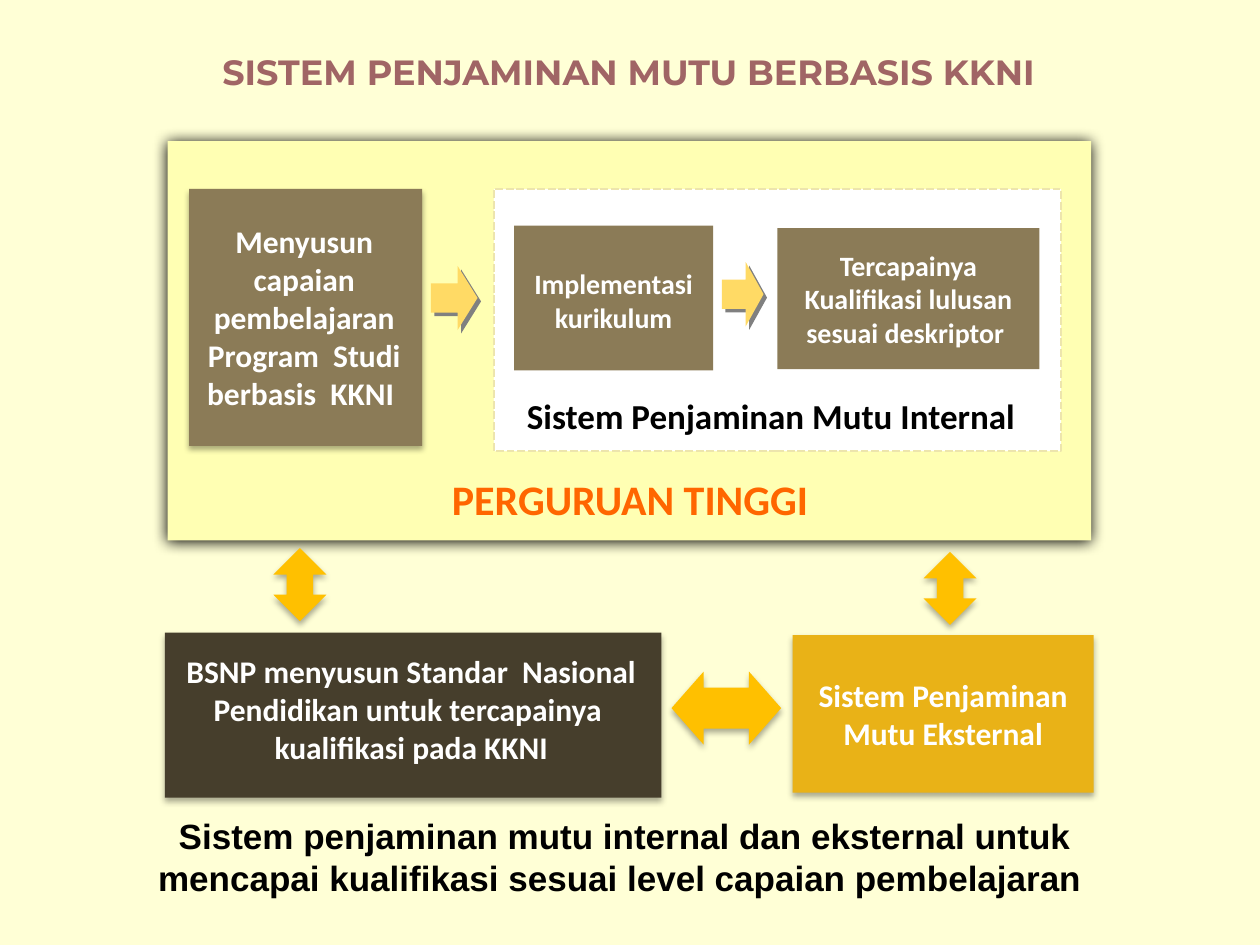
from lxml.etree import SubElement
from pptx import Presentation
from pptx.dml.color import RGBColor
from pptx.enum.dml import MSO_LINE
from pptx.enum.shapes import MSO_SHAPE
from pptx.enum.text import MSO_ANCHOR, PP_ALIGN
from pptx.oxml.ns import qn
from pptx.util import Inches, Pt

SOFT = ("000000", 32, 3.5, 2.2, 90)
GLOW = ("000000", 100, 8.5, 1, 90)
HARD = ("808080", 100, 0, 2.8, 45)

PANEL = ((1.33, 1.12, 7.33, 3.17), "FFFFB3", GLOW)
INTERNAL_FRAME = ((3.92, 1.5, 4.5, 2.08), "FFFFFF", None)
BOXES = [
    ((1.31, 5.02, 3.94, 1.31), "463E2C", SOFT),
    ((1.5, 1.5, 1.85, 2.04), "8B7B57", SOFT),
    ((4.08, 1.79, 1.58, 1.15), "8B7B57", None),
]
LABELLED_BOXES = [
    ((6.29, 5.04, 2.39, 1.25), "E9B217", SOFT,
     "Sistem Penjaminan Mutu Eksternal", {"size": 18, "after": 10}),
    ((6.17, 1.81, 2.08, 1.12), "8B7B57", None,
     "Tercapainya Kualifikasi lulusan sesuai deskriptor ", {"size": 16}),
]
STEP_ARROWS = [(3.35, 2.18, 0.51, 0.37), (5.64, 2.17, 0.51, 0.33)]
VERTICAL_ARROWS = [(2.17, 4.35, 0.42, 0.58), (7.33, 4.38, 0.42, 0.58)]
EXTERNAL_ARROW = (5.33, 5.33, 0.87, 0.58)
TEXTS = [
    ((0.88, 0.35, 8.22, 0.44), "SISTEM PENJAMINAN MUTU BERBASIS KKNI",
     {"size": 20, "font": "Montserrat", "color": "A06565", "anchor": MSO_ANCHOR.TOP}),
    ((1.5, 1.6, 1.83, 1.83), "Menyusun capaian pembelajaran Program  Studi berbasis  KKNI ",
     {"size": 18, "after": 10}),
    ((4.08, 1.92, 1.58, 0.93), "Implementasi kurikulum", {"size": 16, "after": 10}),
    ((3.92, 2.96, 4.4, 0.67), "Sistem Penjaminan Mutu Internal",
     {"size": 20, "color": "000000"}),
    ((3.39, 3.7, 3.22, 0.51), "PERGURUAN TINGGI",
     {"size": 24, "color": "FF6600", "after": 10}),
    ((1.35, 5, 3.83, 1.25),
     "BSNP menyusun Standar  Nasional Pendidikan untuk tercapainya  kualifikasi pada KKNI",
     {"size": 18, "after": 10}),
    ((0.75, 6.41, 8.42, 0.77),
     "Sistem penjaminan mutu internal dan eksternal untuk "
     "mencapai kualifikasi sesuai level capaian pembelajaran ",
     {"size": 20, "font": "Arial", "color": "000000"}),
]


def rgb(value):
    return RGBColor.from_string(value)


def write_text(shape, text, size, font="Calibri", color="FFFFFF", after=0,
               anchor=MSO_ANCHOR.MIDDLE):
    frame = shape.text_frame
    frame.word_wrap = True
    frame.vertical_anchor = anchor
    paragraph = frame.paragraphs[0]
    paragraph.alignment = PP_ALIGN.CENTER
    paragraph.space_after = Pt(after)
    run = paragraph.add_run()
    run.text = text
    run.font.name = font
    run.font.size = Pt(size)
    run.font.bold = True
    run.font.color.rgb = rgb(color)


def add_shadow(shape, color, opacity, blur, distance, angle):
    effects = shape._element.spPr.find(qn("a:effectLst"))
    shadow = SubElement(effects, qn("a:outerShdw"), blurRad=str(Pt(blur)),
                        dist=str(Pt(distance)), dir=str(angle * 60000), rotWithShape="0")
    tint = SubElement(shadow, qn("a:srgbClr"), val=color)
    SubElement(tint, qn("a:alpha"), val=str(opacity * 1000))


def add_block(slide, box, fill, shadow, kind=MSO_SHAPE.RECTANGLE, adjustments=(), rotation=0):
    shape = slide.shapes.add_shape(kind, *map(Inches, box))
    shape.fill.solid()
    shape.fill.fore_color.rgb = rgb(fill)
    shape.line.fill.background()
    shape.shadow.inherit = False
    shape.rotation = rotation
    for index, value in enumerate(adjustments):
        shape.adjustments[index] = value
    if shadow:
        add_shadow(shape, *shadow)
    return shape


def main():
    presentation = Presentation()
    presentation.slide_width, presentation.slide_height = Inches(10), Inches(7.5)
    slide = presentation.slides.add_slide(presentation.slide_layouts[6])
    slide.background.fill.solid()
    slide.background.fill.fore_color.rgb = rgb("FFFFD6")

    add_block(slide, *PANEL)
    frame = add_block(slide, *INTERNAL_FRAME)
    frame.line.color.rgb = rgb("EDE5AD")
    frame.line.width = Pt(1.5)
    frame.line.dash_style = MSO_LINE.SQUARE_DOT

    for box in BOXES:
        add_block(slide, *box)
    for box, fill, shadow, text, style in LABELLED_BOXES:
        write_text(add_block(slide, box, fill, shadow), text, **style)
    for box in STEP_ARROWS:
        add_block(slide, box, "FFDA65", HARD, MSO_SHAPE.UP_ARROW, (0.455, 0.429), 90)
    for box in VERTICAL_ARROWS:
        add_block(slide, box, "FFC000", SOFT, MSO_SHAPE.UP_DOWN_ARROW)
    add_block(slide, EXTERNAL_ARROW, "FFC000", SOFT, MSO_SHAPE.LEFT_RIGHT_ARROW, (0.56, 0.44))
    for box, text, style in TEXTS:
        write_text(slide.shapes.add_textbox(*map(Inches, box)), text, **style)

    presentation.save("out.pptx")


if __name__ == "__main__":
    main()
